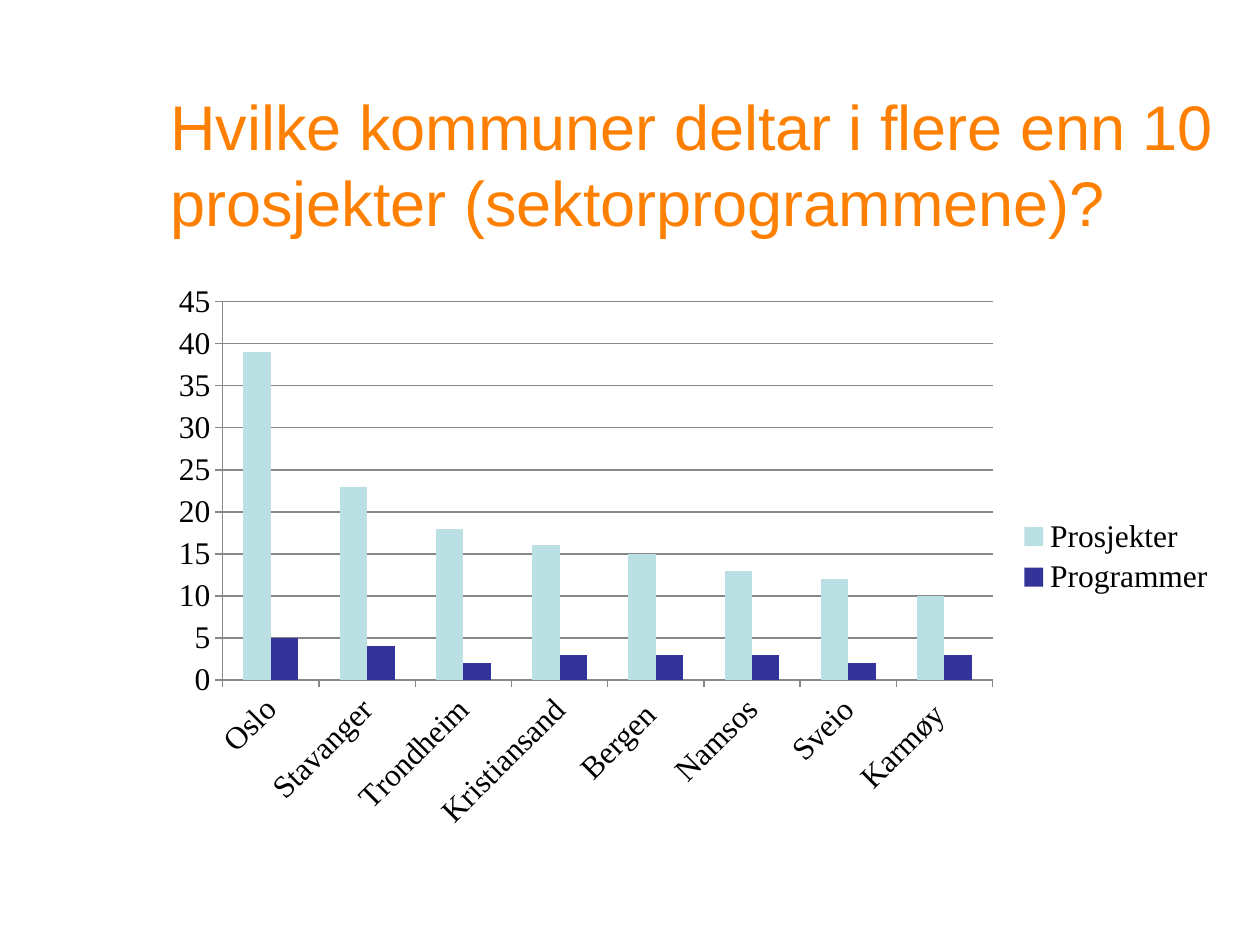
from pptx import Presentation
from pptx import util as u
from pptx.chart import data
from pptx.dml.color import RGBColor
from pptx.enum import chart as ch, text

BLACK = RGBColor(0, 0, 0)
GRAY = RGBColor(0x87, 0x87, 0x87)
ORANGE = RGBColor(0xFF, 0x80, 0x00)
AQUA = RGBColor(0xBB, 0xE0, 0xE3)
NAVY = RGBColor(0x33, 0x33, 0x99)

TOWNS = ["Oslo", "Stavanger", "Trondheim", "Kristiansand",
         "Bergen ", "Namsos", "Sveio", "Karmøy "]
SERIES = [
    ("Prosjekter", [39, 23, 18, 16, 15, 13, 12, 10], AQUA),
    ("Programmer", [5, 4, 2, 3, 3, 3, 2, 3], NAVY),
]


class Page:
    head = "Arial"
    body = "Times New Roman"

    def __init__(self, slide):
        self.slide = slide

    def title(self, words, x, y, w, h):
        box = self.slide.shapes.title
        box.left, box.top, box.width, box.height = map(u.Inches, (x, y, w, h))
        frame = box.text_frame
        frame.text = words
        frame.word_wrap = True
        frame.auto_size = text.MSO_AUTO_SIZE.NONE
        frame.vertical_anchor = text.MSO_ANCHOR.MIDDLE
        para = frame.paragraphs[0]
        para.alignment = text.PP_ALIGN.LEFT
        para.line_spacing = 1.0
        font = para.runs[0].font
        font.name, font.size = self.head, u.Pt(36)
        font.color.rgb = ORANGE

    def bars(self, cats, series, x, y, w, h):
        table = data.CategoryChartData(number_format="General")
        table.categories = cats
        for name, vals, _ in series:
            table.add_series(name, vals)
        chart = self.slide.shapes.add_chart(
            ch.XL_CHART_TYPE.COLUMN_CLUSTERED,
            *map(u.Inches, (x, y, w, h)), table).chart
        chart.has_title = False
        chart.font.name, chart.font.size = self.body, u.Pt(18)
        chart.font.color.rgb = BLACK
        chart.has_legend = True
        chart.legend.position = ch.XL_LEGEND_POSITION.RIGHT
        chart.legend.include_in_layout = False
        plot = chart.plots[0]
        plot.vary_by_categories = False
        plot.gap_width, plot.overlap = 150, 0
        for bar, (_, _, color) in zip(plot.series, series):
            bar.format.fill.solid()
            bar.format.fill.fore_color.rgb = color
            bar.invert_if_negative = False
        self.axes(chart)

    def axes(self, chart):
        cat, val = chart.category_axis, chart.value_axis
        val.minimum_scale, val.maximum_scale, val.major_unit = 0, 45, 5
        val.has_major_gridlines = True
        for part in (cat, val, val.major_gridlines):
            part.format.line.color.rgb = GRAY
            part.format.line.width = u.Pt(0.75)
        for axis in (cat, val):
            axis.major_tick_mark = ch.XL_TICK_MARK.OUTSIDE
            font = axis.tick_labels.font
            font.name, font.size = self.body, u.Pt(18)
            font.color.rgb = BLACK
        turn = cat._element.txPr.bodyPr
        turn.set("rot", "-2700000")
        turn.set("vert", "horz")


def main():
    deck = Presentation()
    deck.slide_width, deck.slide_height = u.Inches(10), u.Inches(7.5)
    page = Page(deck.slides.add_slide(deck.slide_layouts[5]))
    page.title("Hvilke kommuner deltar i flere enn 10 prosjekter "
               "(sektorprogrammene)?", 1.25, 0.67, 8.5, 1.25)
    page.bars(TOWNS, SERIES, 1.25, 2.17, 8.5, 4.5)
    deck.save("out.pptx")


if __name__ == "__main__":
    main()
